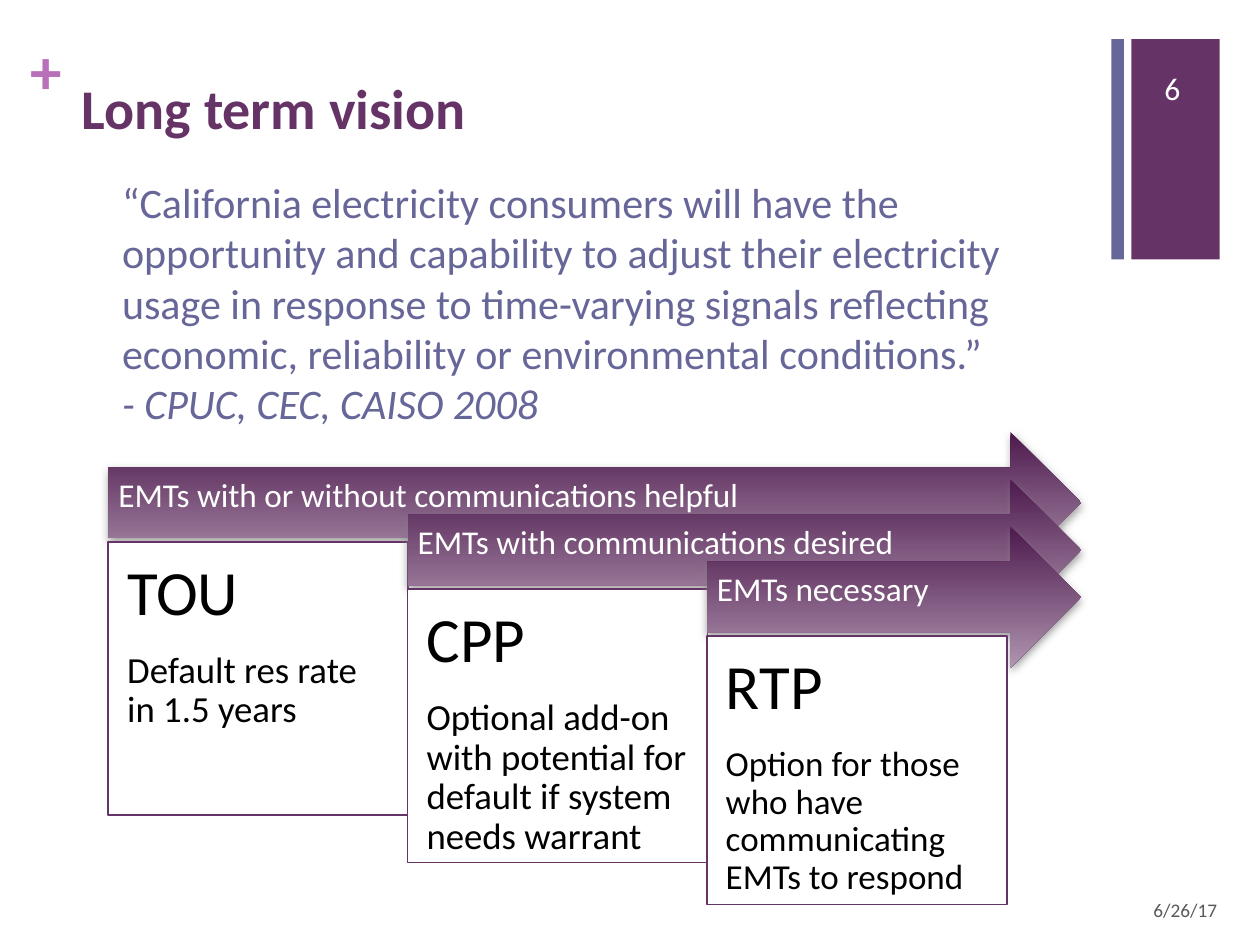
from lxml import etree
from pptx import Presentation
from pptx import util as u
from pptx.dml.color import RGBColor
from pptx.enum import shapes, text
from pptx.oxml.ns import qn

PLUM, SLATE, WHITE = "663366", "666699", "FFFFFF"


def paint(color_owner, hex_color):
    """Give a solid fill, from a shape or a font, a colour."""
    color_owner.fill.solid()
    color_owner.fill.fore_color.rgb = RGBColor.from_string(hex_color)


def write(frame, lines, sizes, hex_color, margins=(0.1, 0.05, 0.1, 0.05),
          align=text.PP_ALIGN.LEFT, anchor=text.MSO_ANCHOR.TOP):
    """Fill a text frame with paragraphs, one size for each."""
    frame.text = "\n".join(lines)
    frame.word_wrap = True
    frame.vertical_anchor = anchor
    (frame.margin_left, frame.margin_top,
     frame.margin_right, frame.margin_bottom) = [u.Inches(m) for m in margins]
    for paragraph, size in zip(frame.paragraphs, sizes):
        paragraph.alignment = align
        for run in paragraph.runs:
            run.font.name, run.font.size = "Calibri", u.Pt(size)
            paint(run.font, hex_color)


prs = Presentation()
prs.slide_width, prs.slide_height = u.Inches(10), u.Inches(7.5)
slide = prs.slides.add_slide(prs.slide_layouts[5])
items = slide.shapes

# Corner bars
for left, width, bar_color in [(8.98, 0.7, PLUM), (8.82, 0.1, SLATE)]:
    bar = items.add_shape(shapes.MSO_SHAPE.RECTANGLE, u.Inches(left),
                          u.Inches(0.31), u.Inches(width), u.Inches(1.75))
    paint(bar, bar_color)
    bar.line.fill.background()
    bar.shadow.inherit = False

# Title and its plus sign
title = items.title
title.left, title.top = u.Inches(0.55), u.Inches(0.53)
title.width, title.height = u.Inches(8.26), u.Inches(1.22)
write(title.text_frame, ["Long term vision"], [32], PLUM)
title.text_frame.paragraphs[0].runs[0].font.bold = True

plus = items.add_textbox(u.Inches(0.24), u.Inches(0.25), u.Inches(0.29), u.Inches(0.61))
write(plus.text_frame, ["+"], [36], "B870B8", margins=(0, 0, 0, 0))
plus.text_frame.paragraphs[0].runs[0].font.bold = True

# Rate steps: each starts one step right and down, all arrows end together
STEP_X, STEP_Y, ARROW_END = 2.375, 0.375, 8.58
rates = [
    ("EMTs with or without communications helpful", "TOU",
     "Default res rate in 1.5 years", 21, 2.17),
    ("EMTs with communications desired", "CPP",
     "Optional add-on with potential for default if system needs warrant", 21, 2.17),
    ("EMTs necessary", "RTP",
     "Option for those who have communicating EMTs to respond", 20, 2.13),
]
for step, (need, rate, detail, detail_size, card_height) in enumerate(rates):
    left, top = 0.86 + step * STEP_X, 3.43 + step * STEP_Y

    arrow = items.add_shape(shapes.MSO_SHAPE.RIGHT_ARROW, u.Inches(left), u.Inches(top),
                            u.Inches(ARROW_END - left), u.Inches(1.12))
    arrow.fill.gradient()
    arrow.fill.gradient_angle = 270
    for stop, position, shade in zip(arrow.fill.gradient_stops, (0, 1), ("4D1A4D", "AF94AF")):
        stop.position, stop.color.rgb = position, RGBColor.from_string(shade)
    arrow.line.fill.background()
    arrow.shadow.inherit = False
    effects = arrow.element.spPr.find(qn("a:effectLst"))
    shadow = etree.SubElement(effects, qn("a:outerShdw"), blurRad=str(u.Pt(5)),
                              dist=str(u.Pt(2)), dir="5400000", rotWithShape="0")
    shadow_color = etree.SubElement(shadow, qn("a:srgbClr"), val="808080")
    etree.SubElement(shadow_color, qn("a:alpha"), val="75000")
    write(arrow.text_frame, [need], [19], WHITE, margins=(0.08, 0.08, 0.28, 0.18),
          anchor=text.MSO_ANCHOR.MIDDLE)

    card = items.add_shape(shapes.MSO_SHAPE.RECTANGLE, u.Inches(left), u.Inches(top + 0.87),
                           u.Inches(2.38), u.Inches(card_height))
    paint(card, WHITE)
    paint(card.line, PLUM)
    card.line.width = u.Pt(1)
    card.shadow.inherit = False
    write(card.text_frame, [rate, detail], [36, detail_size], "000000", margins=[0.15] * 4)
    card.text_frame.paragraphs[0].space_after = u.Pt(13)
    for paragraph in [*arrow.text_frame.paragraphs, *card.text_frame.paragraphs]:
        paragraph.line_spacing = 0.9

# Date and slide number
date = items.add_textbox(u.Inches(7.43), u.Inches(7.02), u.Inches(2.33), u.Inches(0.4))
write(date.text_frame, ["6/26/17"], [11], "595959",
      align=text.PP_ALIGN.RIGHT, anchor=text.MSO_ANCHOR.MIDDLE)
number = items.add_textbox(u.Inches(8.92), u.Inches(0.26), u.Inches(0.77), u.Inches(0.87))
write(number.text_frame, ["6"], [18], WHITE,
      align=text.PP_ALIGN.CENTER, anchor=text.MSO_ANCHOR.MIDDLE)

# Quotation with its source in italics
quote = items.add_textbox(u.Inches(0.87), u.Inches(1.35), u.Inches(7.29), u.Inches(2.12))
write(quote.text_frame, [
    "“California electricity consumers will have the opportunity and capability to adjust "
    "their electricity usage in response to time-varying signals reflecting economic, "
    "reliability or environmental conditions.”",
    "- CPUC, CEC, CAISO 2008"], [24, 24], SLATE)
quote.text_frame.paragraphs[1].runs[0].font.italic = True

prs.save("out.pptx")
